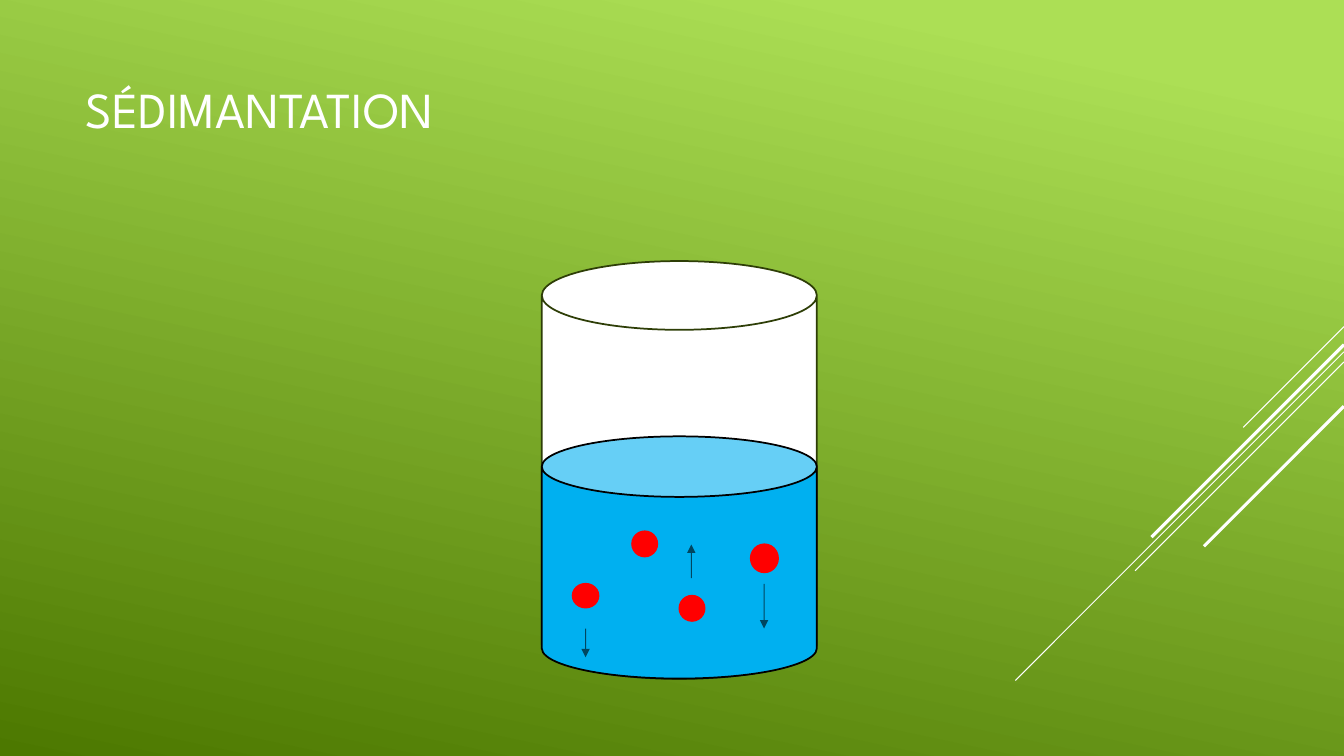
from pptx import Presentation
from pptx.dml.color import RGBColor
from pptx.enum import shapes, text
from pptx.oxml import ns, xmlchemy
from pptx.util import Pt

WHITE = RGBColor(0xFF, 0xFF, 0xFF)
BLACK = RGBColor(0, 0, 0)
RED = RGBColor(0xFF, 0, 0)
WATER = RGBColor(0, 0xB0, 0xF0)
GLASS_EDGE = RGBColor(0x2E, 0x3E, 0x07)
LIME = RGBColor(0xAC, 0xDF, 0x55)
DARK_GREEN = RGBColor(0x4C, 0x78, 0)

SLIDE_WIDTH, SLIDE_HEIGHT = 960, 540
OUTLINE = 1.25

# Diagonals from the right edge: start height, run, line width
DIAGONALS = [
    (233.3, 72, 0.75),
    (251.3, 234.7, 0.75),
    (258.5, 149.2, 0.75),
    (246.2, 137.5, 2.25),
    (290.2, 100, 2.25),
]
# Particles: left, top, width, height
PARTICLES = [
    (409, 417, 18.5, 17),
    (451.5, 379.5, 18, 18),
    (485.3, 425.5, 18, 18),
    (536.3, 388.8, 19.5, 20),
]
# Movements: x, start height, end height
MOVEMENTS = [(493.8, 413, 389), (418.3, 449, 469.5), (545.8, 417, 449)]


def set_format(target, values):
    for name, value in values.items():
        setattr(target, name, value)


def set_background(slide):
    fill = slide.background.fill
    fill.gradient()
    fill.gradient_angle = 258
    for stop, position, color in zip(fill.gradient_stops, (0.1, 1), (LIME, DARK_GREEN)):
        stop.position = position
        stop.color.rgb = color


def add_title(slide, wording):
    title = slide.shapes.title
    set_format(title, {"left": Pt(54), "top": Pt(43), "width": Pt(672), "height": Pt(68.5)})
    frame = title.text_frame
    frame.text = wording
    set_format(frame, {"vertical_anchor": text.MSO_ANCHOR.MIDDLE, "word_wrap": True})
    paragraph = frame.paragraphs[0]
    paragraph.alignment = text.PP_ALIGN.LEFT
    font = paragraph.runs[0].font
    set_format(font, {"name": "League Spartan", "size": Pt(36)})
    font.color.rgb = WHITE


def add_solid(slide, kind, box, fill, edge):
    shape = slide.shapes.add_shape(kind, *map(Pt, box))
    shape.shadow.inherit = False
    shape.fill.solid()
    shape.fill.fore_color.rgb = fill
    shape.line.color.rgb = edge
    shape.line.width = Pt(OUTLINE)


def add_line(slide, ends, color, width):
    line = slide.shapes.add_connector(shapes.MSO_CONNECTOR.STRAIGHT, *map(Pt, ends))
    line.line.color.rgb = color
    line.line.width = Pt(width)
    line._element.spPr.append(xmlchemy.OxmlElement("a:effectLst"))
    return line


def add_arrow(slide, ends):
    outline = add_line(slide, ends, BLACK, 0.75).line._get_or_add_ln()
    # 60 % opacity and a triangular head
    alpha = xmlchemy.OxmlElement("a:alpha")
    alpha.set("val", "60000")
    outline.find(".//" + ns.qn("a:srgbClr")).append(alpha)
    head = xmlchemy.OxmlElement("a:tailEnd")
    head.set("type", "triangle")
    outline.append(head)


def main():
    presentation = Presentation()
    set_format(presentation, {"slide_width": Pt(SLIDE_WIDTH), "slide_height": Pt(SLIDE_HEIGHT)})
    slide = presentation.slides.add_slide(presentation.slide_layouts[5])
    set_background(slide)

    # Decoration and title
    for top, run, width in DIAGONALS:
        add_line(slide, (SLIDE_WIDTH, top, SLIDE_WIDTH - run, top + run), WHITE, width)
    add_title(slide, "SÉDIMANTATION")

    # Glass and water
    can, ellipse = shapes.MSO_SHAPE.CAN, shapes.MSO_SHAPE.OVAL
    add_solid(slide, can, (387, 186.5, 196.5, 298.5), WHITE, GLASS_EDGE)
    add_solid(slide, can, (387, 311.7, 196.5, 173), WATER, BLACK)

    # Particles and their movements
    for box in PARTICLES:
        add_solid(slide, ellipse, box, RED, RED)
    for x, start, end in MOVEMENTS:
        add_arrow(slide, (x, start, x, end))

    presentation.save("out.pptx")


if __name__ == "__main__":
    main()
